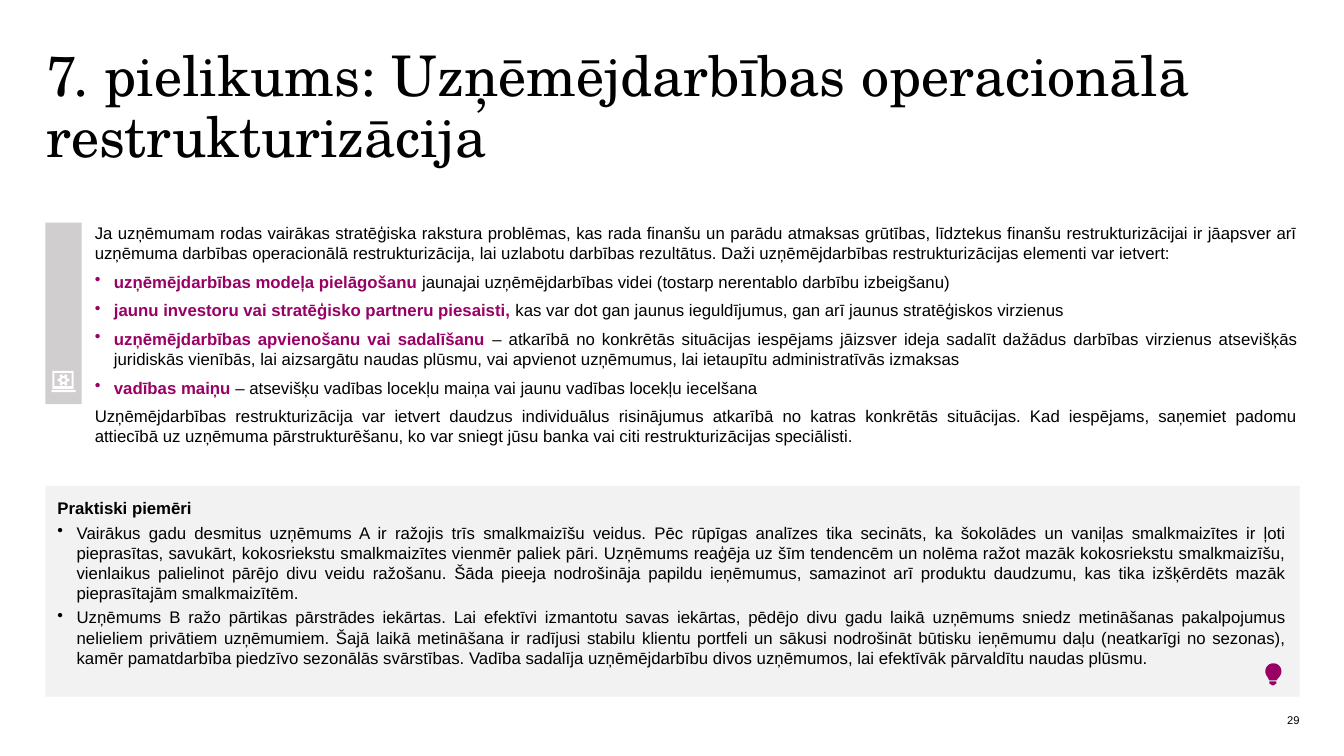
from dataclasses import dataclass
from math import cos, radians, sin

from lxml import etree
from pptx import Presentation
from pptx.dml.color import RGBColor
from pptx.enum.shapes import MSO_SHAPE
from pptx.enum.text import MSO_ANCHOR, PP_ALIGN
from pptx.oxml.ns import qn
from pptx.util import Inches, Pt

RECTANGLE = MSO_SHAPE.RECTANGLE
TOP, MIDDLE = MSO_ANCHOR.TOP, MSO_ANCHOR.MIDDLE
LEFT, RIGHT, JUSTIFY = PP_ALIGN.LEFT, PP_ALIGN.RIGHT, PP_ALIGN.JUSTIFY

BODY_FONT, TITLE_FONT = "Arial", "TeX Gyre Schola"
BLACK, WHITE, PLUM = "000000", "FFFFFF", "990066"
PANEL_GREY, BAND_GREY = "F2F2F2", "D0CECE"
BULLET_INDENT = 0.19

Point = tuple[float, float]


@dataclass
class Paragraph:
    text: str
    lead: str = ""
    lead_color: str = PLUM
    bullet: bool = False
    align: PP_ALIGN = JUSTIFY
    after: float = 6


INTRO = [
    Paragraph("Ja uzņēmumam rodas vairākas stratēģiska rakstura problēmas, kas rada finanšu un parādu atmaksas grūtības, līdztekus finanšu restrukturizācijai ir jāapsver arī uzņēmuma darbības operacionālā restrukturizācija, lai uzlabotu darbības rezultātus. Daži uzņēmējdarbības restrukturizācijas elementi var ietvert:"),
    Paragraph(" jaunajai uzņēmējdarbības videi (tostarp nerentablo darbību izbeigšanu)",
              lead="uzņēmējdarbības modeļa pielāgošanu", bullet=True),
    Paragraph(" kas var dot gan jaunus ieguldījumus, gan arī jaunus stratēģiskos virzienus",
              lead="jaunu investoru vai stratēģisko partneru piesaisti,", bullet=True),
    Paragraph("– atkarībā no konkrētās situācijas iespējams jāizsver ideja sadalīt dažādus darbības virzienus atsevišķās juridiskās vienībās, lai aizsargātu naudas plūsmu, vai apvienot uzņēmumus, lai ietaupītu administratīvās izmaksas",
              lead="uzņēmējdarbības apvienošanu vai sadalīšanu ", bullet=True),
    Paragraph("– atsevišķu vadības locekļu maiņa vai jaunu vadības locekļu iecelšana",
              lead="vadības maiņu ", bullet=True),
    Paragraph("Uzņēmējdarbības restrukturizācija var ietvert daudzus individuālus risinājumus atkarībā no katras konkrētās situācijas. Kad iespējams, saņemiet padomu attiecībā uz uzņēmuma pārstrukturēšanu, ko var sniegt jūsu banka vai citi restrukturizācijas speciālisti."),
]

EXAMPLES = [
    Paragraph("", lead="Praktiski piemēri", lead_color=BLACK, align=LEFT, after=3),
    Paragraph("Vairākus gadu desmitus uzņēmums A ir ražojis trīs smalkmaizīšu veidus. Pēc rūpīgas analīzes tika secināts, ka šokolādes un vaniļas smalkmaizītes ir ļoti pieprasītas, savukārt, kokosriekstu smalkmaizītes vienmēr paliek pāri. Uzņēmums reaģēja uz šīm tendencēm un nolēma ražot mazāk kokosriekstu smalkmaizīšu, vienlaikus palielinot pārējo divu veidu ražošanu. Šāda pieeja nodrošināja papildu ieņēmumus, samazinot arī produktu daudzumu, kas tika izšķērdēts mazāk pieprasītajām smalkmaizītēm.",
              bullet=True, after=3),
    Paragraph("Uzņēmums B ražo pārtikas pārstrādes iekārtas. Lai efektīvi izmantotu savas iekārtas, pēdējo divu gadu laikā uzņēmums sniedz metināšanas pakalpojumus nelieliem privātiem uzņēmumiem. Šajā laikā metināšana ir radījusi stabilu klientu portfeli un sākusi nodrošināt būtisku ieņēmumu daļu (neatkarīgi no sezonas), kamēr pamatdarbība piedzīvo sezonālās svārstības. Vadība sadalīja uzņēmējdarbību divos uzņēmumos, lai efektīvāk pārvaldītu naudas plūsmu.",
              bullet=True, after=0),
]


def rgb(color: str) -> RGBColor:
    return RGBColor.from_string(color)


def paint(shape, color: str):
    shape.shadow.inherit = False
    shape.fill.solid()
    shape.fill.fore_color.rgb = rgb(color)
    shape.line.fill.background()
    return shape


def add_rectangle(slide, left: float, top: float, width: float, height: float, color: str):
    box = (Inches(side) for side in (left, top, width, height))
    return paint(slide.shapes.add_shape(RECTANGLE, *box), color)


def add_text_box(slide, left: float, top: float, width: float, height: float):
    return slide.shapes.add_textbox(Inches(left), Inches(top), Inches(width), Inches(height))


def add_outline(slide, contours: list[list[Point]], color: str) -> None:
    scaled = [[(Inches(x), Inches(y)) for x, y in contour] for contour in contours]
    builder = slide.shapes.build_freeform(*scaled[0][0])
    builder.add_line_segments(scaled[0][1:], close=True)
    for contour in scaled[1:]:
        builder.move_to(*contour[0])
        builder.add_line_segments(contour[1:], close=True)
    paint(builder.convert_to_shape(), color)


def arc(x: float, y: float, radius: float, start: int, end: int, step: int) -> list[Point]:
    return [(x + radius * cos(radians(angle)), y + radius * sin(radians(angle)))
            for angle in range(start, end + 1, step)]


def corners(left: float, top: float, right: float, bottom: float) -> list[Point]:
    return [(left, top), (right, top), (right, bottom), (left, bottom)]


def write(shape, paragraphs: list[Paragraph], *, size: float = 12, font: str = BODY_FONT,
          anchor: MSO_ANCHOR = TOP, inset: float = 0, line_spacing: float = 1.0) -> None:
    frame = shape.text_frame
    frame.word_wrap = True
    frame.vertical_anchor = anchor
    frame.margin_left = frame.margin_right = Inches(inset)
    frame.margin_top = frame.margin_bottom = Inches(inset)
    for index, content in enumerate(paragraphs):
        paragraph = frame.add_paragraph() if index else frame.paragraphs[0]
        paragraph.alignment = content.align
        paragraph.line_spacing = line_spacing
        paragraph.space_after = Pt(content.after)
        if content.bullet:
            properties = paragraph._p.get_or_add_pPr()
            properties.set("marL", str(Inches(BULLET_INDENT)))
            properties.set("indent", str(-Inches(BULLET_INDENT)))
            etree.SubElement(properties, qn("a:buChar")).set("char", "•")
        for words, color, bold in ((content.lead, content.lead_color, True),
                                   (content.text, BLACK, False)):
            if words:
                run = paragraph.add_run()
                run.text = words
                run.font.name = font
                run.font.size = Pt(size)
                run.font.bold = bold
                run.font.color.rgb = rgb(color)


def draw_bulb(slide) -> None:
    glass = arc(12.63, 6.66, 0.08, -220, 40, 10) + [(12.66, 6.75), (12.59, 6.75)]
    base = [(12.59, 6.76), (12.66, 6.76), (12.66, 6.78),
            (12.63, 6.8), (12.62, 6.8), (12.59, 6.78)]
    add_outline(slide, [glass, base], PLUM)


def draw_laptop(slide) -> None:
    add_outline(slide, [corners(0.52, 3.68, 0.73, 3.86), corners(0.54, 3.7, 0.71, 3.83)], WHITE)
    add_rectangle(slide, 0.51, 3.87, 0.24, 0.02, WHITE)
    x, y = 0.63, 3.77
    teeth = [point for angle in range(0, 360, 60)
             for radius, offset in ((0.04, -20), (0.06, -14), (0.06, 14), (0.04, 20))
             for point in arc(x, y, radius, angle + offset, angle + offset, 1)]
    add_outline(slide, [teeth, arc(x, y, 0.02, 0, 340, 20)], WHITE)


def main() -> None:
    deck = Presentation()
    deck.slide_width, deck.slide_height = Inches(13.33), Inches(7.5)
    slide = deck.slides.add_slide(deck.slide_layouts[6])

    page_number = add_text_box(slide, 9.89, 7.08, 3, 0.13)
    write(page_number, [Paragraph("29", align=RIGHT, after=0)], size=8, anchor=MIDDLE)
    title = add_text_box(slide, 0.46, 0.36, 12.43, 1.44)
    heading = Paragraph("7. pielikums: Uzņēmējdarbības operacionālā restrukturizācija",
                        align=LEFT, after=0)
    write(title, [heading], size=40, font=TITLE_FONT, anchor=MIDDLE, line_spacing=0.9)
    write(add_text_box(slide, 0.94, 2.21, 11.94, 2.24), INTRO)
    write(add_rectangle(slide, 0.45, 4.82, 12.44, 2.09, PANEL_GREY), EXAMPLES, inset=0.12)
    draw_bulb(slide)
    add_rectangle(slide, 0.45, 2.21, 0.36, 1.8, BAND_GREY)
    draw_laptop(slide)

    deck.save("out.pptx")


if __name__ == "__main__":
    main()
